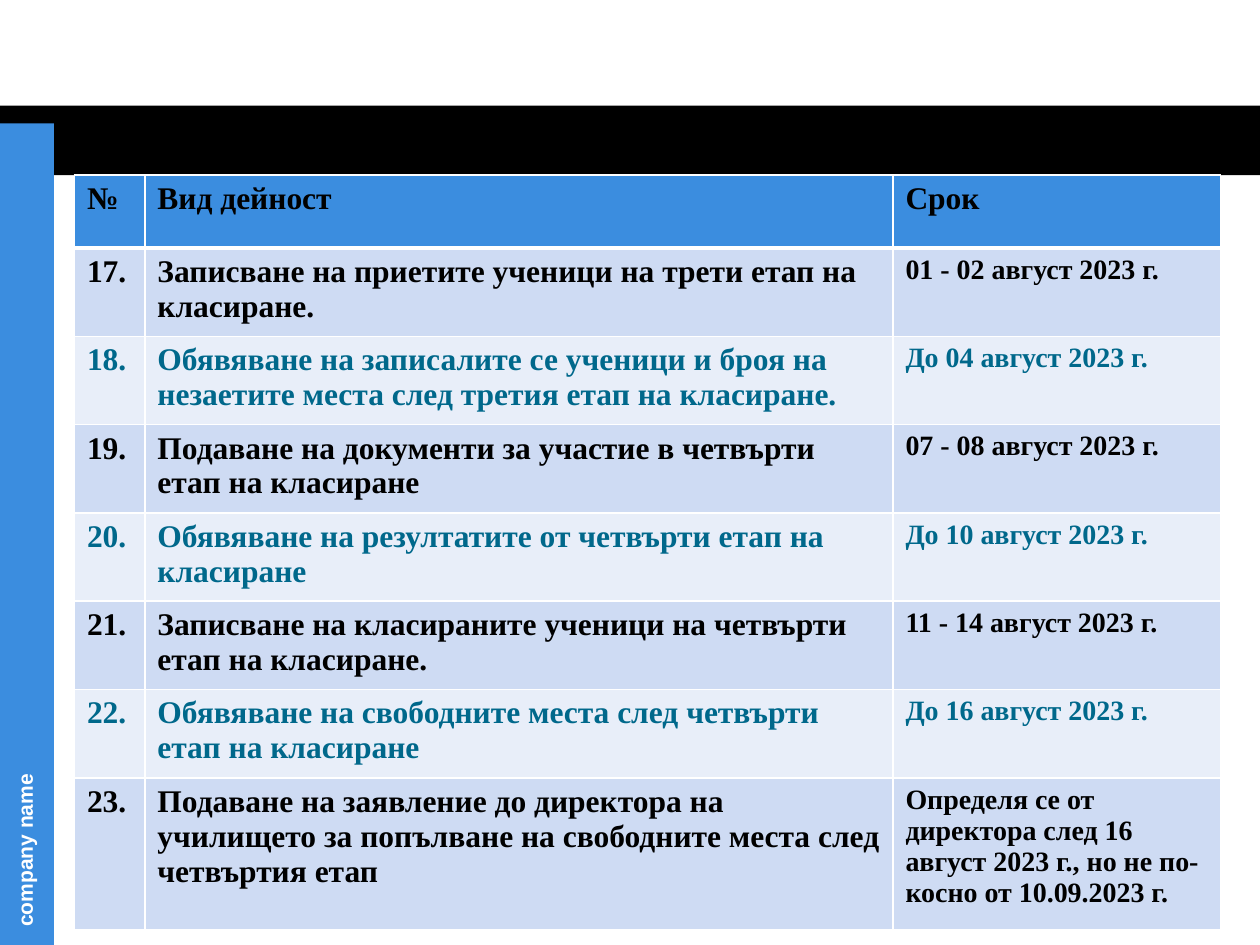
from dataclasses import dataclass

from lxml import etree
from pptx import Presentation
from pptx.dml.color import RGBColor
from pptx.enum import shapes, text
from pptx.oxml import ns
from pptx.util import Cm, Pt

COLORS = {
    "black": "000000",
    "white": "FFFFFF",
    "blue": "3B8DDF",
    "teal": "00688B",
    "odd_row": "CEDBF3",
    "even_row": "E8EEF9",
}
COLUMN_WIDTHS = (1.42, 15.08, 6.6)
HEADER_HEIGHT, ROW_HEIGHT, LAST_HEIGHT = 1.47, 1.78, 3.07


@dataclass
class Bar:
    left: float
    top: float
    width: float
    height: float
    color: str


@dataclass
class Stage:
    number: str
    activity: str
    term: str


BARS = (
    Bar(0, 2.13, 25.4, 1.4, "black"),
    Bar(0, 2.49, 1.09, 16.56, "blue"),
)
HEADER = Stage("№", "Вид дейност", "Срок")
STAGES = (
    Stage("17.", "Записване на приетите ученици на трети етап на класиране.",
          "01 - 02 август 2023 г."),
    Stage("18.", "Обявяване на записалите се ученици и броя на незаетите места "
          "след третия етап на класиране.", "До 04 август 2023 г."),
    Stage("19.", "Подаване на документи за участие в четвърти етап на класиране",
          "07 - 08 август 2023 г."),
    Stage("20.", "Обявяване на резултатите от четвърти етап на класиране",
          "До 10 август 2023 г."),
    Stage("21.", "Записване на класираните ученици на четвърти етап на класиране.",
          "11 - 14 август 2023 г."),
    Stage("22.", "Обявяване на свободните места след четвърти етап на класиране",
          "До 16 август 2023 г."),
    Stage("23.", "Подаване на заявление до директора на училището за попълване "
          "на свободните места след четвъртия етап",
          "Определя се от директора след 16 август 2023 г., "
          "но не по-косно от 10.09.2023 г."),
)


def rgb(name: str) -> RGBColor:
    return RGBColor.from_string(COLORS[name])


def write(tf, content: str, font: str, size: int, color: str) -> None:
    tf.text = content
    f = tf.paragraphs[0].runs[0].font
    f.name, f.size, f.bold = font, Pt(size), True
    f.color.rgb = rgb(color)


def draw_bar(s, bar: Bar) -> None:
    sp = s.shapes.add_shape(shapes.MSO_SHAPE.RECTANGLE, Cm(bar.left), Cm(bar.top),
                            Cm(bar.width), Cm(bar.height))
    sp.shadow.inherit = False
    sp.fill.solid()
    sp.fill.fore_color.rgb = rgb(bar.color)
    sp.line.fill.background()


def draw_company_name(s) -> None:
    sp = s.shapes.add_textbox(Cm(-3.86), Cm(14.2), Cm(8.71), Cm(0.76))
    sp.rotation = 270
    tf = sp.text_frame
    tf.word_wrap = True
    tf.auto_size = text.MSO_AUTO_SIZE.SHAPE_TO_FIT_TEXT
    write(tf, "company name", "Arial", 12, "white")


def set_borders(cell, bottom: float) -> None:
    tc_pr = cell._tc.get_or_add_tcPr()
    for side, width in (("L", 1), ("R", 1), ("T", 1), ("B", bottom)):
        ln = etree.SubElement(tc_pr, ns.qn(f"a:ln{side}"), w=str(Pt(width)))
        fill = etree.SubElement(ln, ns.qn("a:solidFill"))
        etree.SubElement(fill, ns.qn("a:srgbClr"), val=COLORS["white"])


def fill_row(row, stage: Stage, fill: str, color: str, term_size: int = 16,
             bottom: float = 1) -> None:
    contents = (stage.number, stage.activity, stage.term)
    for cell, content, size in zip(row.cells, contents, (18, 18, term_size)):
        set_borders(cell, bottom)
        cell.fill.solid()
        cell.fill.fore_color.rgb = rgb(fill)
        write(cell.text_frame, content, "Times New Roman", size, color)


def draw_schedule(s) -> None:
    heights = [HEADER_HEIGHT] + [ROW_HEIGHT] * (len(STAGES) - 1) + [LAST_HEIGHT]
    table = s.shapes.add_table(len(heights), len(COLUMN_WIDTHS), Cm(1.5), Cm(3.53),
                               Cm(sum(COLUMN_WIDTHS)), Cm(sum(heights))).table
    for column, width in zip(table.columns, COLUMN_WIDTHS):
        column.width = Cm(width)
    for row, height in zip(table.rows, heights):
        row.height = Cm(height)

    fill_row(table.rows[0], HEADER, "blue", "black", term_size=18, bottom=3)
    for i, stage in enumerate(STAGES):
        fill, color = ("even_row", "teal") if i % 2 else ("odd_row", "black")
        fill_row(table.rows[i + 1], stage, fill, color)


def main() -> None:
    prs = Presentation()
    prs.slide_width, prs.slide_height = Cm(25.4), Cm(19.05)
    s = prs.slides.add_slide(prs.slide_layouts[6])
    for bar in BARS:
        draw_bar(s, bar)
    draw_company_name(s)
    draw_schedule(s)
    prs.save("out.pptx")


if __name__ == "__main__":
    main()
